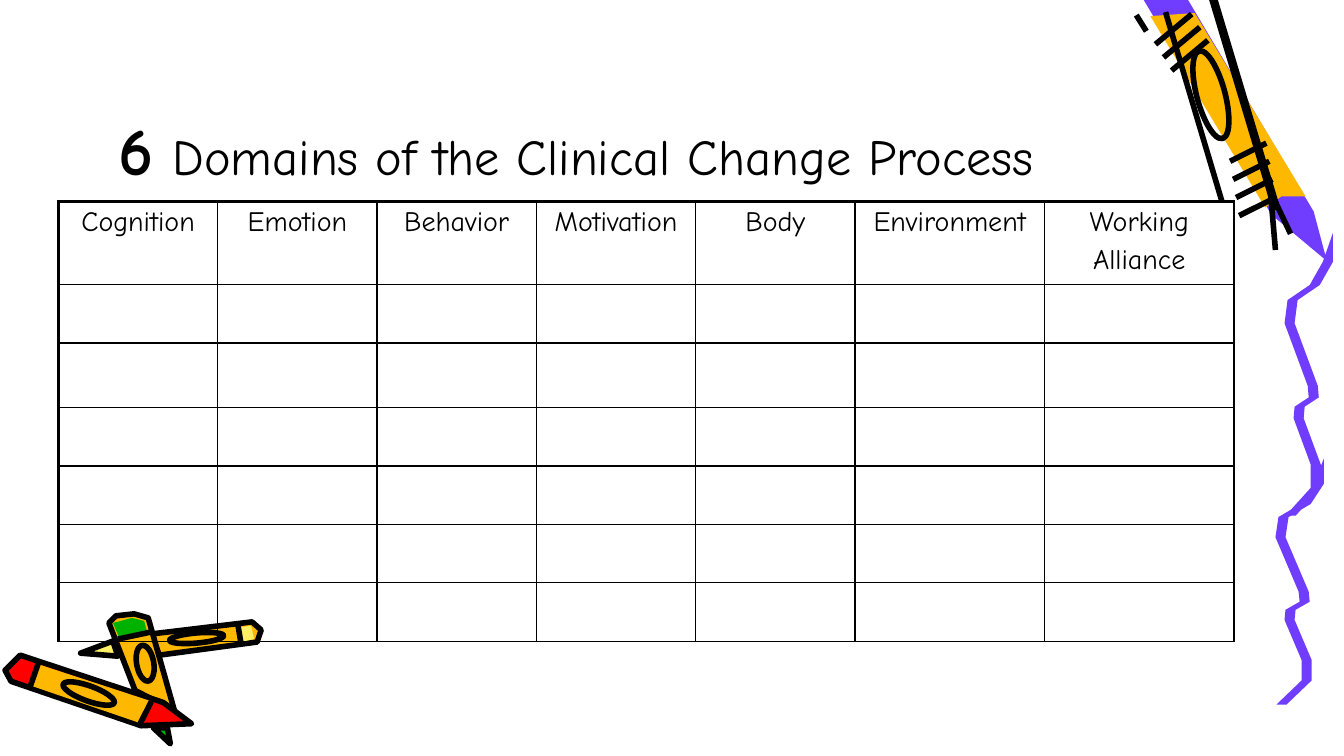
"""Build the clinical change domains worksheet slide with its crayon artwork."""
from lxml import etree
from pptx import Presentation
from pptx.dml.color import RGBColor
from pptx.enum.shapes import MSO_CONNECTOR, MSO_SHAPE
from pptx.enum.text import MSO_ANCHOR, PP_ALIGN
from pptx.oxml.ns import qn
from pptx.util import Inches, Pt

STRAIGHT, OVAL = MSO_CONNECTOR.STRAIGHT, MSO_SHAPE.OVAL
BOTTOM = MSO_ANCHOR.BOTTOM
LEFT, CENTER = PP_ALIGN.LEFT, PP_ALIGN.CENTER

THEME = {
    "font": "Comic Neue",
    "black": "000000", "purple": "703DFF", "orange": "FFB800",
    "yellow": "FFEF66", "red": "FF0000", "green": "00B200",
    "number": 48, "gap": 40, "title": 36, "header": 20,
    "outer": 2.25, "inner": 1, "ink": 4, "bar": 6,
}

TITLE_BOX = (1.08, 0.75, 11.54, 1.17)
TITLE = [("6", "number", True), (" ", "gap", False),
         ("Domains of the Clinical Change Process", "title", False)]
HEADERS = ["Cognition", "Emotion", "Behavior", "Motivation", "Body", "Environment",
           "Working\nAlliance"]
TABLE_AT = (0.58, 2)
COL_WIDTHS = [1.58] * 5 + [1.88] * 2
ROW_HEIGHTS = [0.79, 0.58, 0.64] + [0.58] * 4

BIG_CRAYON = {
    "fills": [
        ("purple", False, [(11.32, -0.04), (12.61, 2.13), (13.16, 2.59), (13.03, 2.1),
                           (11.76, -0.04)]),
        ("orange", False, [(12.55, 2.06), (12.71, 1.95), (12.95, 1.95), (11.85, 0.13),
                           (11.41, 0.16)]),
    ],
    "oval": (12.01, 0.94, 0.28, 0.9, -15),
    "lines": [("ink", 11.56, 0.12, 12.12, 2), ("bar", 12.03, -0.02, 12.66, 2.08),
              ("ink", 12.6, 1.9, 12.65, 2.48), ("ink", 12.6, 1.9, 12.8, 2.32),
              ("ink", 11.27, 0.15, 11.37, 0.31)],
}
YELLOW_CRAYON = {
    "fills": [
        ("yellow", True, [(1.12, 6.36), (0.8, 6.48), (1.17, 6.51)]),
        ("orange", True, [(1.5, 6.29), (2.5, 6.17), (2.59, 6.25), (2.55, 6.37), (1.58, 6.5)]),
        ("yellow", False, [(2.39, 6.22), (2.49, 6.21), (2.52, 6.34), (2.39, 6.37)]),
    ],
    "oval": (1.95, 6.33, 0.54, 0.1, -5),
    "lines": [("ink", 2.36, 6.2, 2.39, 6.38)],
}
GREEN_CRAYON = {
    "fills": [
        ("green", True, [(1.66, 7.22), (1.69, 7.38), (1.52, 7.22)]),
        ("orange", True, [(1.34, 6.85), (1.08, 6.18), (1.15, 6.11), (1.33, 6.09), (1.47, 6.13),
                          (1.73, 7.05)]),
        ("green", False, [(1.12, 6.18), (1.31, 6.13), (1.43, 6.16), (1.46, 6.27),
                          (1.18, 6.32)]),
    ],
    "oval": (1.44, 6.58, 0.17, 0.36, -10),
    "lines": [("ink", 1.17, 6.34, 1.5, 6.27)],
}
RED_CRAYON = {
    "fills": [
        ("red", True, [(0.2, 6.5), (1.62, 6.97), (1.9, 7.18), (1.4, 7.2), (0.11, 6.76),
                       (0.05, 6.65)]),
        ("orange", False, [(0.3, 6.8), (1.38, 7.17), (1.48, 6.95), (0.38, 6.59)]),
    ],
    "oval": (0.88, 6.88, 0.54, 0.15, 20),
    "lines": [("ink", 0.38, 6.58, 0.3, 6.81), ("ink", 1.5, 6.96, 1.39, 7.18)],
}
CRAYONS = [BIG_CRAYON, YELLOW_CRAYON, GREEN_CRAYON, RED_CRAYON]

TICKS = [
    {"count": 3, "start": (11.46, 0.44), "reach": (0.36, -0.3), "step": (0.08, 0.13)},
    {"count": 4, "start": (12.2, 1.6), "reach": (0.36, -0.18), "step": (0.03, 0.18)},
]
WAVE_TOP = 4.55
WAVE = [(13.13, 0), (13.08, 0.25), (12.95, 0.45), (12.73, 0.58), (12.7, 0.78), (12.93, 1.32),
        (12.94, 1.42), (12.8, 1.5), (12.79, 1.6), (12.96, 2), (12.96, 2.2), (12.71, 2.44)]
WAVE_HALF_WIDTH = 0.05
WAVES = [(0, WAVE_TOP, 1), (0.09, 2.31, 1.15)]


def color(name):
    return RGBColor.from_string(THEME[name])


def write(p, text, size, bold=False, align=LEFT, before=0):
    p.alignment, p.space_before = align, Pt(before)
    r = p.add_run()
    r.text = text
    r.font.name, r.font.size, r.font.bold = THEME["font"], Pt(THEME[size]), bold
    r.font.color.rgb = color("black")


def ink(line, weight):
    line.color.rgb, line.width = color("black"), Pt(THEME[weight])


def add_outline(shapes, fill, inked, points):
    start, *rest = [(Inches(x), Inches(y)) for x, y in points]
    builder = shapes.build_freeform(*start)
    builder.add_line_segments(rest, close=True)
    sp = builder.convert_to_shape()
    sp.shadow.inherit = False
    sp.fill.solid()
    sp.fill.fore_color.rgb = color(fill)
    if inked:
        ink(sp.line, "ink")
    else:
        sp.line.fill.background()


def add_line(shapes, weight, *ends):
    line = shapes.add_connector(STRAIGHT, *map(Inches, ends))
    ink(line.line, weight)
    etree.SubElement(line._element.spPr, qn("a:effectLst"))


def add_crayon(s, crayon):
    shapes = s.shapes.add_group_shape().shapes
    for outline in crayon["fills"]:
        add_outline(shapes, *outline)
    x, y, w, h, angle = crayon["oval"]
    oval = shapes.add_shape(OVAL, *map(Inches, (x - w / 2, y - h / 2, w, h)))
    oval.rotation = angle
    oval.shadow.inherit = False
    oval.fill.background()
    ink(oval.line, "ink")
    for line in crayon["lines"]:
        add_line(shapes, *line)


def add_ticks(s, count, start, reach, step):
    shapes = s.shapes.add_group_shape().shapes
    for i in range(count):
        x, y = (a + i * b for a, b in zip(start, step))
        add_line(shapes, "ink", x, y, x + reach[0], y + reach[1])


def add_wave(s, shift, top, stretch):
    middle = [(x + shift, top + y * stretch) for x, y in WAVE]
    left = [(x - WAVE_HALF_WIDTH, y) for x, y in middle[1:]]
    right = [(x + WAVE_HALF_WIDTH, y) for x, y in middle[1:]]
    add_outline(s.shapes, "purple", False, middle[:1] + right + left[::-1])


def set_border(cell, side, weight):
    ln = etree.SubElement(cell._tc.get_or_add_tcPr(), qn(f"a:ln{side}"), w=str(Pt(THEME[weight])))
    fill = etree.SubElement(ln, qn("a:solidFill"))
    etree.SubElement(fill, qn("a:srgbClr"), val=THEME["black"])


def add_domain_table(s):
    rows, cols = len(ROW_HEIGHTS), len(COL_WIDTHS)
    box = (*TABLE_AT, sum(COL_WIDTHS), sum(ROW_HEIGHTS))
    table = s.shapes.add_table(rows, cols, *map(Inches, box)).table
    table.first_row = table.horz_banding = False
    for i, width in enumerate(COL_WIDTHS):
        table.columns[i].width = Inches(width)
    for i, height in enumerate(ROW_HEIGHTS):
        table.rows[i].height = Inches(height)
        for j in range(cols):
            cell = table.cell(i, j)
            for side, outer in (("L", j == 0), ("R", j == cols - 1), ("T", i == 0), ("B", False)):
                set_border(cell, side, "outer" if outer else "inner")
            cell.fill.background()
    for j, header in enumerate(HEADERS):
        tf = table.cell(0, j).text_frame
        for k, line in enumerate(header.split("\n")):
            p = tf.add_paragraph() if k else tf.paragraphs[0]
            write(p, line, "header", align=CENTER, before=4)


def main():
    prs = Presentation()
    prs.slide_width, prs.slide_height = Inches(13.33), Inches(7.5)
    s = prs.slides.add_slide(prs.slide_layouts[6])
    for crayon in CRAYONS:
        add_crayon(s, crayon)
    for wave in WAVES:
        add_wave(s, *wave)
    for ticks in TICKS:
        add_ticks(s, **ticks)
    tf = s.shapes.add_textbox(*map(Inches, TITLE_BOX)).text_frame
    tf.word_wrap, tf.vertical_anchor = True, BOTTOM
    for text, size, bold in TITLE:
        write(tf.paragraphs[0], text, size, bold=bold)
    add_domain_table(s)
    prs.save("out.pptx")


if __name__ == "__main__":
    main()
